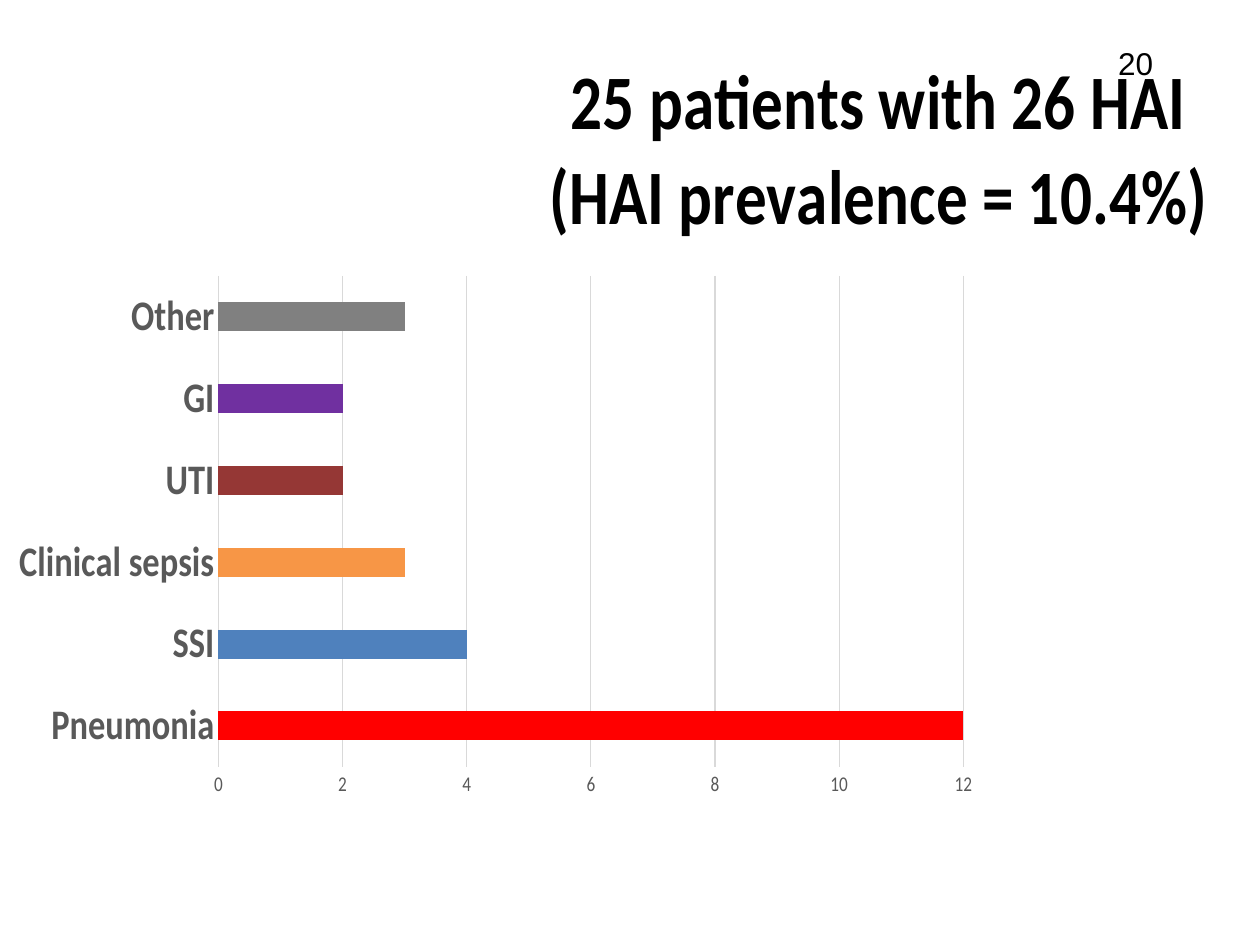
from dataclasses import dataclass

from lxml.etree import SubElement
from pptx import Presentation
from pptx.chart.data import CategoryChartData
from pptx.dml.color import RGBColor
from pptx.enum.chart import XL_CHART_TYPE as ChartType, XL_TICK_MARK as TickMark
from pptx.enum.text import MSO_AUTO_SIZE as AutoSize, PP_ALIGN as Align
from pptx.oxml.ns import qn
from pptx.util import Pt


@dataclass(frozen=True)
class Theme:
    font: str = "Calibri"
    number_font: str = "Arial"
    black: str = "000000"
    label: str = "595959"
    grid: str = "D9D9D9"
    title_size: int = 44
    category_size: int = 24
    page_size: int = 18
    value_size: int = 12
    chart_size: int = 10


THEME = Theme()

TITLE_LINES = ["25 patients with 26 HAI", "(HAI prevalence = 10.4%)"]
INFECTIONS = [  # category, patients, bar colour
    ("Pneumonia", 12, "FF0000"),
    ("SSI", 4, "4F81BD"),
    ("Clinical sepsis", 3, "F79646"),
    ("UTI", 2, "953735"),
    ("GI", 2, "7030A0"),
    ("Other", 3, "808080"),
]


def set_font(font, name, size, color, bold=False):
    font.name = name
    font.size = Pt(size)
    font.bold = bold
    font.color.rgb = RGBColor.from_string(color)


def set_line(line, color):
    line.color.rgb = RGBColor.from_string(color)
    line.width = Pt(0.75)


def set_layout(element, index, **settings):
    """Replace the manual layout of a chart part; index is its place among the children."""
    for old in element.findall(qn("c:layout")):
        element.remove(old)
    layout = SubElement(element, qn("c:layout"))
    manual = SubElement(layout, qn("c:manualLayout"))
    for tag, value in settings.items():
        SubElement(manual, qn(f"c:{tag}")).set("val", str(value))
    element.insert(index, layout)


def add_chart_title(chart):
    """Add the title; it runs past the chart's right edge, which narrows the drawn chart."""
    title = chart.chart_title
    frame = title.text_frame
    for number, line in enumerate(TITLE_LINES):
        paragraph = frame.add_paragraph() if number else frame.paragraphs[0]
        paragraph.text = line
        set_font(paragraph.font, THEME.font, THEME.title_size, THEME.black, bold=True)
    set_layout(title.element, 1, xMode="edge", yMode="edge", x=0.55, y=0.02)


def style_axes(chart):
    categories, values = chart.category_axis, chart.value_axis
    for axis in (categories, values):
        axis.major_tick_mark = axis.minor_tick_mark = TickMark.NONE
    set_font(categories.tick_labels.font, THEME.font, THEME.category_size, THEME.label, bold=True)
    set_line(categories.format.line, THEME.grid)
    set_font(values.tick_labels.font, THEME.font, THEME.value_size, THEME.label)
    values.format.line.fill.background()
    values.minimum_scale, values.maximum_scale, values.major_unit = 0, 12, 2
    values.has_major_gridlines = True
    set_line(values.major_gridlines.format.line, THEME.grid)


def add_infection_chart(slide, left, top, width, height):
    names, counts, colors = zip(*INFECTIONS)
    data = CategoryChartData()
    data.categories = names
    data.add_series("Series 1", counts)
    chart = slide.shapes.add_chart(
        ChartType.BAR_CLUSTERED, Pt(left), Pt(top), Pt(width), Pt(height), data
    ).chart
    set_font(chart.font, THEME.font, THEME.chart_size, THEME.black)
    chart.has_legend = False
    add_chart_title(chart)
    style_axes(chart)

    plot = chart.plots[0]
    plot.gap_width = 182
    plot.vary_by_categories = False
    for index, color in enumerate(colors):
        fill = plot.series[0].points[index].format.fill
        fill.solid()
        fill.fore_color.rgb = RGBColor.from_string(color)
    set_layout(chart.element.chart.plotArea, 0, layoutTarget="inner", xMode="edge",
               yMode="edge", x=0.22, y=0.31, w=0.75, h=0.63)


def add_page_number(slide, number, left, top, width, height):
    box = slide.shapes.add_textbox(Pt(left), Pt(top), Pt(width), Pt(height))
    frame = box.text_frame
    frame.word_wrap = False
    frame.auto_size = AutoSize.SHAPE_TO_FIT_TEXT
    paragraph = frame.paragraphs[0]
    paragraph.text = str(number)
    paragraph.alignment = Align.RIGHT
    set_font(paragraph.font, THEME.number_font, THEME.page_size, THEME.black)


def main():
    presentation = Presentation()
    presentation.slide_width, presentation.slide_height = Pt(720), Pt(540)
    slide = presentation.slides.add_slide(presentation.slide_layouts[6])
    add_infection_chart(slide, 0, 19.5, 692.5, 445.5)
    add_page_number(slide, 20, 631.5, 21.5, 34.5, 29)
    presentation.save("out.pptx")


if __name__ == "__main__":
    main()
